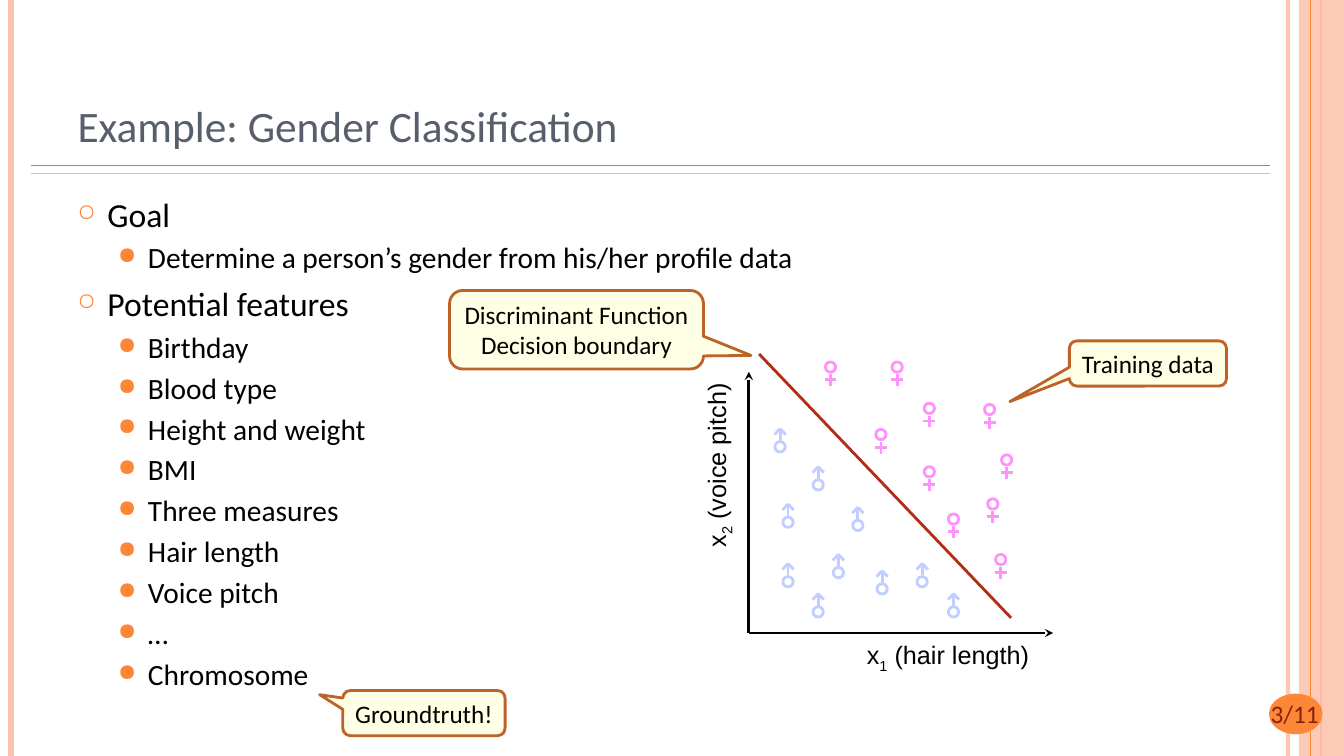
from lxml.etree import SubElement
from pptx import Presentation
from pptx.dml.color import RGBColor
from pptx.enum.shapes import MSO_CONNECTOR, MSO_SHAPE as SHAPE
from pptx.enum.text import MSO_ANCHOR as ANCHOR, PP_ALIGN as ALIGN
from pptx.oxml.ns import qn
from pptx.util import Cm, Pt

BLACK = RGBColor(0x00, 0x00, 0x00)
SLATE = RGBColor(0x57, 0x5F, 0x6D)
ORANGE = RGBColor(0xFE, 0x86, 0x37)
DEEP_ORANGE = RGBColor(0xFF, 0x6B, 0x0A)
LIGHT_ORANGE = RGBColor(0xFE, 0xB6, 0x87)
PEACH = RGBColor(0xFE, 0xC3, 0xAE)
MAROON = RGBColor(0x86, 0x21, 0x10)
RED = RGBColor(0xB3, 0x2C, 0x16)
BROWN = RGBColor(0xBC, 0x63, 0x29)
CREAM = RGBColor(0xFF, 0xFF, 0xCC)
PINK = RGBColor(0xFF, 0x92, 0xFB)
BLUE = RGBColor(0xC1, 0xCE, 0xFF)

WIDTH, HEIGHT = 33.87, 19.05

# Centre and top of each symbol's circle, in cm
FEMALES = [(22.61, 9.12), (23.42, 10.16), (25.37, 11.46), (23.42, 11.76), (25.02, 12.57),
           (22.2, 10.82), (25.22, 13.97), (24.94, 10.19), (24.03, 12.95), (20.93, 9.12)]
MALES = [(19.86, 13.03), (21.13, 14.3), (21.62, 13.11), (22.23, 14.71), (23.24, 14.53),
         (20.62, 15.29), (24.03, 15.29), (20.62, 12.09), (19.86, 14.53), (19.66, 11.13)]
# Strokes of each symbol, relative to that point
FEMALE_STROKES = [(-0.15, 0.45, 0.15, 0.45), (0, 0.31, 0, 0.61)]
MALE_STROKES = [(0, -0.03, 0, -0.33), (0, -0.33, 0.14, -0.18), (0, -0.33, -0.14, -0.18)]

OUTLINE = [
    ("Goal", ["Determine a person’s gender from his/her profile data"]),
    ("Potential features", ["Birthday", "Blood type", "Height and weight", "BMI",
                            "Three measures", "Hair length", "Voice pitch", "…",
                            "Chromosome"]),
]


class SlideBuilder:
    def __init__(self, s, font="Calibri"):
        self.s, self.font = s, font

    def run(self, p, text, size=18, color=BLACK, font=None):
        r = p.add_run()
        r.text = text
        for name, value in {"name": font or self.font, "size": Pt(size)}.items():
            setattr(r.font, name, value)
        r.font.color.rgb = color
        return r

    def alpha(self, shape, percent):
        """Set the opacity of the first colour of the shape."""
        color = next(shape._element.spPr.iter(qn("a:srgbClr")))
        SubElement(color, qn("a:alpha")).set("val", str(percent * 1000))

    def line(self, x1, y1, x2, y2, color, width, arrow=False, parent=None):
        c = (parent or self.s).shapes.add_connector(
            MSO_CONNECTOR.STRAIGHT, Cm(x1), Cm(y1), Cm(x2), Cm(y2))
        c.line.color.rgb, c.line.width = color, Pt(width)
        if arrow:
            SubElement(c.line._get_or_add_ln(), qn("a:tailEnd")).set("type", "stealth")
        SubElement(c._element.spPr, qn("a:effectLst"))
        return c

    def shape(self, kind, x, y, w, h, fill=None, line=None, parent=None):
        sh = (parent or self.s).shapes.add_shape(kind, Cm(x), Cm(y), Cm(w), Cm(h))
        sh.shadow.inherit = False
        if fill:
            sh.fill.solid()
            sh.fill.fore_color.rgb = fill
        else:
            sh.fill.background()
        if line:
            sh.line.color.rgb, sh.line.width = line, Pt(2)
        else:
            sh.line.fill.background()
        return sh

    def text_box(self, x, y, w, h, wrap=True):
        box = self.s.shapes.add_textbox(Cm(x), Cm(y), Cm(w), Cm(h))
        box.text_frame.word_wrap = wrap
        return box

    def title(self, text, x, y, w, h):
        sp = self.s.shapes.title
        for name, value in dict(left=x, top=y, width=w, height=h).items():
            setattr(sp, name, Cm(value))
        tf = sp.text_frame
        tf.vertical_anchor = ANCHOR.BOTTOM
        p = tf.paragraphs[0]
        p.alignment = ALIGN.LEFT
        self.run(p, text, 31, SLATE)

    def bullet(self, p, text, level):
        left, char, scale, size, before = [(0.76, "○", 70, 24, 6),
                                           (1.78, "●", 80, 21, 4)][level]
        p.level = level
        pPr = p._p.get_or_add_pPr()
        pPr.set("marL", str(Cm(left)))
        pPr.set("indent", str(-Cm(0.76)))
        SubElement(SubElement(pPr, qn("a:buClr")), qn("a:srgbClr")).set("val", str(ORANGE))
        SubElement(pPr, qn("a:buSzPct")).set("val", str(scale * 1000))
        SubElement(pPr, qn("a:buChar")).set("char", char)
        p.space_before = Pt(before)
        self.run(p, text, size)

    def outline(self, sections, x, y, w, h):
        tf = self.text_box(x, y, w, h).text_frame
        items = [(text, level) for head, points in sections
                 for text, level in [(head, 0)] + [(point, 1) for point in points]]
        for i, (text, level) in enumerate(items):
            self.bullet(tf.add_paragraph() if i else tf.paragraphs[0], text, level)
        tf.paragraphs[0].space_before = Pt(0)

    def callout(self, lines, x, y, w, h, tip):
        sh = self.shape(SHAPE.ROUNDED_RECTANGULAR_CALLOUT, x, y, w, h, CREAM, BROWN)
        self.alpha(sh, 50)
        sh.adjustments[0], sh.adjustments[1] = tip
        tf = sh.text_frame
        tf.word_wrap, tf.vertical_anchor = False, ANCHOR.MIDDLE
        for i, text in enumerate(lines):
            p = tf.add_paragraph() if i else tf.paragraphs[0]
            p.alignment = ALIGN.CENTER
            self.run(p, text)

    def axis_label(self, index, text, x, y, w, h, rotation=0):
        box = self.text_box(x, y, w, h, wrap=False)
        box.rotation = rotation
        p = box.text_frame.paragraphs[0]
        p.alignment, p.line_spacing = ALIGN.CENTER, 0.65
        self.run(p, "x", font="Arial")
        sub = self.run(p, index, font="Arial")
        sub.font._element.set("baseline", "-25000")
        self.run(p, f" ({text})", font="Arial")

    def symbol(self, x, y, strokes, color):
        group = self.s.shapes.add_group_shape()
        # A group holds its children directly in its shapes collection
        self.shape(SHAPE.OVAL, x - 0.13, y, 0.26, 0.26, line=color, parent=group)
        for x1, y1, x2, y2 in strokes:
            self.line(x + x1, y + y1, x + x2, y + y2, color, 2, parent=group)

    def frame(self, number):
        """Draw the side stripes, the title rules and the page number."""
        self.alpha(self.line(32.46, 0, 32.46, HEIGHT, PEACH, 3), 93)
        self.line(0.28, 0, 0.28, HEIGHT, PEACH, 4.5)
        self.line(33.3, 0, 33.3, HEIGHT, ORANGE, 1.5)
        self.alpha(self.shape(SHAPE.RECTANGLE, 32.74, 0, 1.13, HEIGHT, PEACH), 87)
        self.line(33.02, 0, 33.02, HEIGHT, ORANGE, 0.75)
        for y, color in [(4.17, DEEP_ORANGE), (4.37, LIGHT_ORANGE)]:
            self.line(0.79, y, 32, y, color, 1)
        self.shape(SHAPE.OVAL, 31.98, 17.48, 1.35, 1.02, ORANGE)
        p = self.text_box(31.09, 17.48, 3.07, 1.02).text_frame.paragraphs[0]
        p.alignment = ALIGN.CENTER
        self.run(p, number, color=MAROON)


def main():
    prs = Presentation()
    prs.slide_width, prs.slide_height = Cm(WIDTH), Cm(HEIGHT)
    b = SlideBuilder(prs.slides.add_slide(prs.slide_layouts[5]))
    b.frame("3/11")
    b.title("Example: Gender Classification", 1.7, 0.76, 27.66, 3.18)
    b.outline(OUTLINE, 1.7, 4.75, 27.66, 13.23)
    b.callout(["Groundtruth!"], 8.64, 17.4, 4.09, 1.14, (-0.643, -0.407))

    for x, y in [(26.54, 15.95), (18.87, 9.37)]:
        b.line(18.87, 15.95, x, y, BLACK, 2, arrow=True)
    b.axis_label("1", "hair length", 21.49, 16.18, 4.8, 0.79)
    b.axis_label("2", "voice pitch", 15.77, 11.33, 4.7, 0.79, rotation=270)
    for points, strokes, color in [(FEMALES, FEMALE_STROKES, PINK),
                                   (MALES, MALE_STROKES, BLUE)]:
        for x, y in points:
            b.symbol(x, y, strokes, color)

    b.line(19.13, 8.92, 25.48, 15.57, RED, 2)
    b.callout(["Discriminant Function", "Decision boundary"],
              11.33, 7.32, 6.4, 1.98, (0.687, 0.327))
    b.callout(["Training data"], 26.95, 8.59, 3.96, 1.14, (-0.879, 0.843))
    prs.save("out.pptx")


if __name__ == "__main__":
    main()
